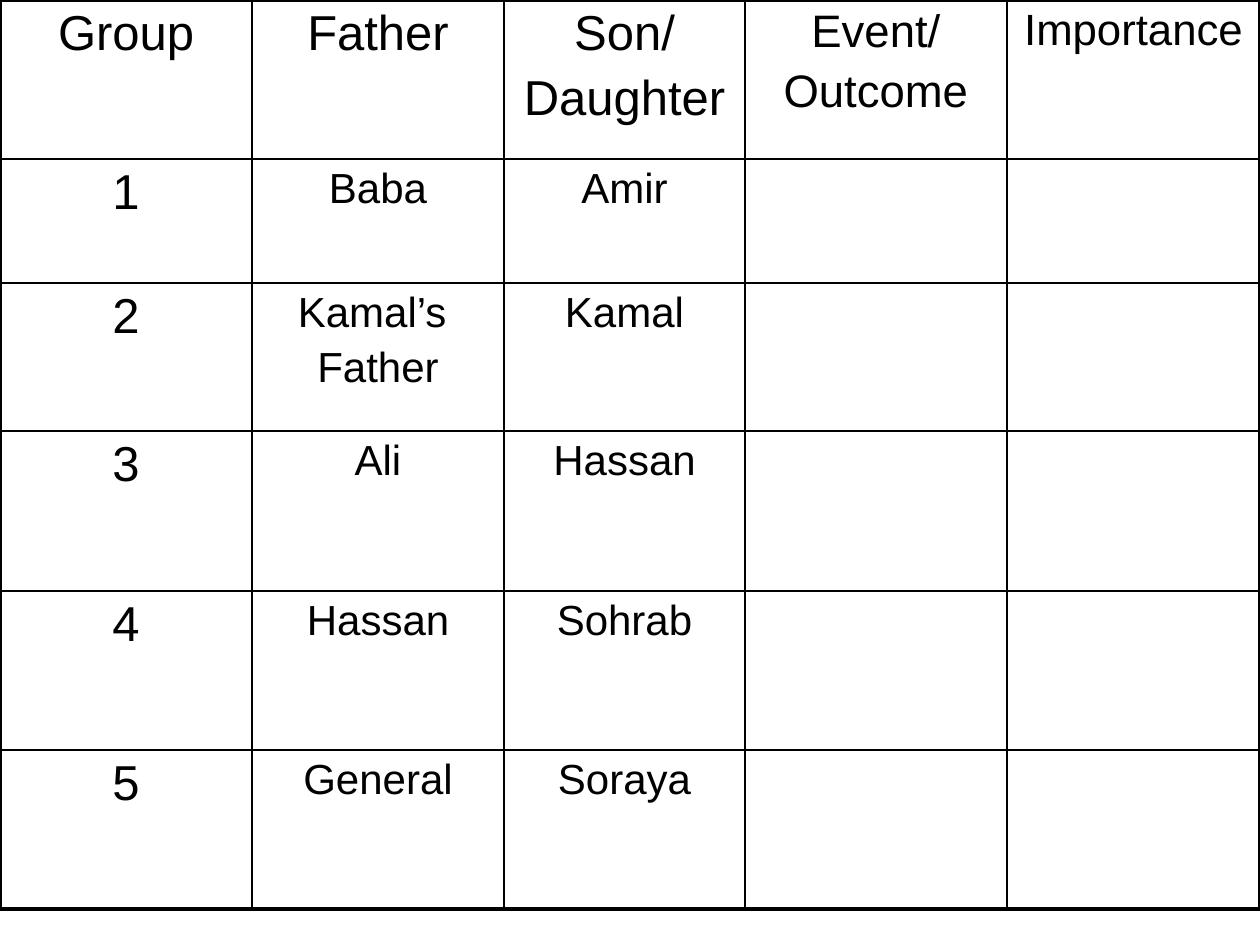
from typing import NamedTuple

from pptx import Presentation
from pptx.dml.color import RGBColor
from pptx.enum import text
from pptx.oxml import ns
from pptx.util import Pt
from lxml import etree

SCALE = 914400 / 126
BLACK = RGBColor(0, 0, 0)
FONT = "Arial"
THIN, THICK = 1, 2.25


class Entry(NamedTuple):
    lines: tuple[str, ...]
    size: int


def px(n: int) -> int:
    return round(n * SCALE)


def number(n: int) -> Entry:
    return Entry((str(n),), 28)


def name(*lines: str) -> Entry:
    return Entry(lines, 24)


COLUMNS = [252, 252, 241, 262, 253]
ROWS = [159, 124, 148, 160, 159, 159]
HEADER = [
    Entry(("Group",), 28),
    Entry(("Father",), 28),
    Entry(("Son/", "Daughter"), 28),
    Entry(("Event/", "Outcome"), 26),
    Entry(("Importance",), 25),
]
PAIRS = [
    (name("Baba"), name("Amir")),
    (name("Kamal’s ", "Father"), name("Kamal")),
    (name("Ali"), name("Hassan")),
    (name("Hassan"), name("Sohrab")),
    (name("General"), name("Soraya")),
]
BLANK = Entry(("",), 24)


def add_border(cell, side: str, width: float) -> None:
    ln = etree.SubElement(cell._tc.get_or_add_tcPr(), ns.qn(f"a:{side}"), w=str(Pt(width)))
    fill = etree.SubElement(ln, ns.qn("a:solidFill"))
    etree.SubElement(fill, ns.qn("a:srgbClr"), val=str(BLACK))


def write_entry(cell, entry: Entry) -> None:
    tf = cell.text_frame
    tf.text = "\n".join(entry.lines)
    for p in tf.paragraphs:
        p.alignment = text.PP_ALIGN.CENTER
        p.font.name = FONT
        p.font.size = Pt(entry.size)
        p.font.color.rgb = BLACK
        before = etree.Element(ns.qn("a:spcBef"))
        etree.SubElement(before, ns.qn("a:spcPct"), val="20000")
        p._p.get_or_add_pPr().insert(0, before)


def add_grid(s, entries: list[list[Entry]]) -> None:
    table = s.shapes.add_table(
        len(ROWS), len(COLUMNS), 0, 0, px(sum(COLUMNS)), px(sum(ROWS))
    ).table
    table.first_row = table.horz_banding = False
    for column, width in zip(table.columns, COLUMNS):
        column.width = px(width)
    for row, height in zip(table.rows, ROWS):
        row.height = px(height)
    for i, line in enumerate(entries):
        for j, entry in enumerate(line):
            cell = table.cell(i, j)
            outer = {
                "lnL": j == 0,
                "lnR": j == len(COLUMNS) - 1,
                "lnT": i == 0,
                "lnB": i == len(ROWS) - 1,
            }
            for side, is_outer in outer.items():
                add_border(cell, side, THICK if is_outer else THIN)
            cell.fill.background()
            write_entry(cell, entry)


def main() -> None:
    prs = Presentation()
    prs.slide_width, prs.slide_height = px(1260), px(945)
    s = prs.slides.add_slide(prs.slide_layouts[6])
    groups = [
        [number(n), father, child, BLANK, BLANK]
        for n, (father, child) in enumerate(PAIRS, 1)
    ]
    add_grid(s, [HEADER, *groups])
    prs.save("out.pptx")


if __name__ == "__main__":
    main()
